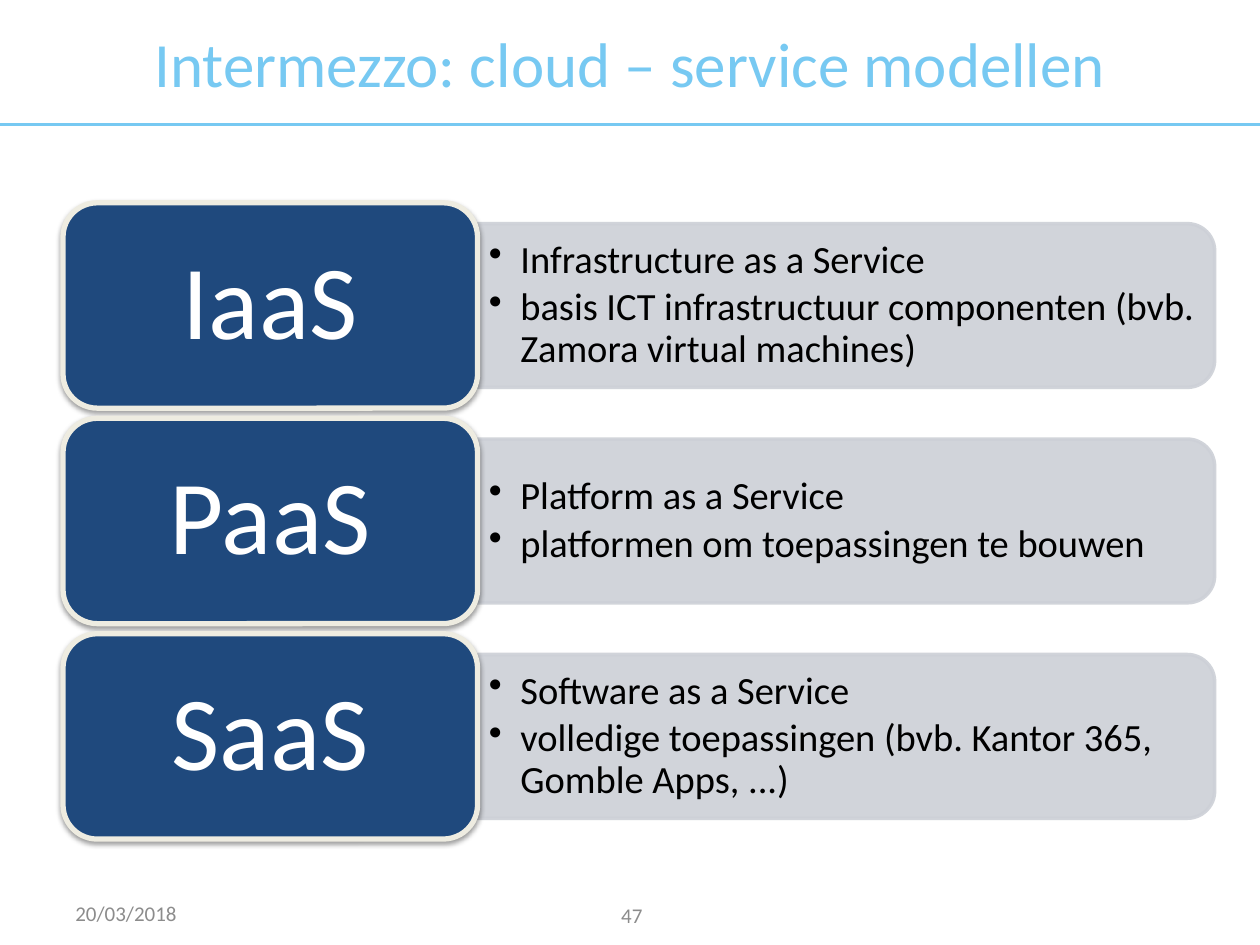
from lxml import etree
from pptx import Presentation
from pptx.dml.color import RGBColor
from pptx.enum import shapes, text
from pptx.oxml.ns import qn
from pptx.util import Inches, Pt

COLORS = {"accent": "77C9F2", "footer": "8C8C8C", "panel": "CDD0D7", "card": "1F497D",
          "border": "EEECE1", "white": "FFFFFF", "black": "000000"}
MODELS = [
    ("IaaS", ["Infrastructure as a Service",
              "basis ICT infrastructuur componenten (bvb. Zamora virtual machines)"]),
    ("PaaS", ["Platform as a Service", "platformen om toepassingen te bouwen"]),
    ("SaaS", ["Software as a Service",
              "volledige toepassingen (bvb. Kantor 365, Gomble Apps, ...)"]),
]
FIRST_TOP, PITCH = 1.61, 1.71
CARD_LEFT, CARD_WIDTH, CARD_HEIGHT = 0.5, 3.29, 1.63
PANEL_WIDTH, PANEL_HEIGHT = 5.85, 1.3
LIST_WIDTH, LIST_HEIGHT = 5.78, 1.18


def color(name):
    return RGBColor.from_string(COLORS[name])


def child(parent, tag, **attributes):
    return etree.SubElement(parent, qn(tag), attributes)


class Slide:
    font = "Calibri"

    def __init__(self, page):
        self.page = page

    def fill_text(self, frame, lines, size, ink, align=text.PP_ALIGN.LEFT,
                  insets=(0.1, 0.05), **spacing):
        formats = {"word_wrap": True, "vertical_anchor": text.MSO_ANCHOR.MIDDLE,
                   "margin_left": Inches(insets[0]), "margin_right": Inches(insets[0]),
                   "margin_top": Inches(insets[1]), "margin_bottom": Inches(insets[1])}
        for name, value in formats.items():
            setattr(frame, name, value)
        for index, line in enumerate(lines):
            para = frame.add_paragraph() if index else frame.paragraphs[0]
            for name, value in {"alignment": align, **spacing}.items():
                setattr(para, name, value)
            span = para.add_run()
            span.text = line
            for name, value in {"name": self.font, "size": Pt(size)}.items():
                setattr(span.font, name, value)
            span.font.color.rgb = color(ink)

    def title(self, words):
        box = self.page.shapes.title
        box.left, box.top, box.width, box.height = 0, 0, Inches(10), Inches(0.99)
        self.fill_text(box.text_frame, [words], 36, "accent", text.PP_ALIGN.CENTER)

    def rule(self, y):
        line = self.page.shapes.add_connector(
            shapes.MSO_CONNECTOR.STRAIGHT, 0, Inches(y), Inches(10), Inches(y))
        line.line.color.rgb = color("accent")
        line.line.width = Pt(1.5)
        child(line._element.spPr, "a:effectLst")

    def label(self, left, top, width, height, lines, size, ink, **style):
        box = self.page.shapes.add_textbox(*map(Inches, (left, top, width, height)))
        self.fill_text(box.text_frame, lines, size, ink, **style)
        return box

    def shape(self, kind, left, top, width, height, fill, border, weight):
        box = self.page.shapes.add_shape(kind, *map(Inches, (left, top, width, height)))
        box.fill.solid()
        box.fill.fore_color.rgb = color(fill)
        box.line.color.rgb = color(border)
        box.line.width = Pt(weight)
        box.shadow.inherit = False
        return box

    def panel(self, left, middle):
        # A tall shape turned a quarter, so its rounded end faces right
        box = self.shape(shapes.MSO_SHAPE.ROUND_2_SAME_RECTANGLE,
                         left + (PANEL_WIDTH - PANEL_HEIGHT) / 2, middle - PANEL_WIDTH / 2,
                         PANEL_HEIGHT, PANEL_WIDTH, "panel", "panel", 2)
        box.rotation = 90
        for tint in box._element.spPr.iter(qn("a:srgbClr")):
            child(tint, "a:alpha", val="90000")

    def bullets(self, left, middle, lines):
        box = self.label(left, middle - LIST_HEIGHT / 2, LIST_WIDTH, LIST_HEIGHT, lines, 22,
                         "black", insets=(0.09, 0.05), line_spacing=0.9, space_after=Pt(3.3))
        for para in box.text_frame.paragraphs:
            props = para._p.get_or_add_pPr()
            props.set("marL", str(Inches(0.25)))
            props.set("indent", str(Inches(-0.25)))
            child(props, "a:buChar", char="•")

    def card(self, top, name):
        box = self.shape(shapes.MSO_SHAPE.ROUNDED_RECTANGLE, CARD_LEFT, top, CARD_WIDTH,
                         CARD_HEIGHT, "card", "border", 3)
        effects = box._element.spPr.find(qn("a:effectLst"))
        shadow = child(effects, "a:outerShdw", blurRad=str(Pt(3.1)), dist=str(Pt(1.6)),
                       dir="5400000", rotWithShape="0")
        tint = child(shadow, "a:srgbClr", val=COLORS["black"])
        child(tint, "a:alpha", val="38000")
        self.fill_text(box.text_frame, [name], 60, "white", text.PP_ALIGN.CENTER,
                       insets=(0.25, 0.12), line_spacing=0.9, space_after=Pt(21))


def main():
    deck = Presentation()
    deck.slide_width, deck.slide_height = Inches(10), Inches(7.5)
    slide = Slide(deck.slides.add_slide(deck.slide_layouts[5]))

    # Heading
    slide.rule(0.99)
    slide.title("Intermezzo: cloud – service modellen")

    # One row per service model
    panel_left = CARD_LEFT + CARD_WIDTH
    for row, (name, lines) in enumerate(MODELS):
        top = FIRST_TOP + row * PITCH
        middle = top + CARD_HEIGHT / 2
        slide.panel(panel_left, middle)
        slide.bullets(panel_left, middle, lines)
        slide.card(top, name)

    # Footer
    slide.label(0.5, 7.05, 2.33, 0.4, ["20/03/2018"], 12, "footer")
    slide.label(3.85, 7.06, 2.33, 0.4, ["47"], 12, "footer", align=text.PP_ALIGN.CENTER)

    deck.save("out.pptx")


if __name__ == "__main__":
    main()
